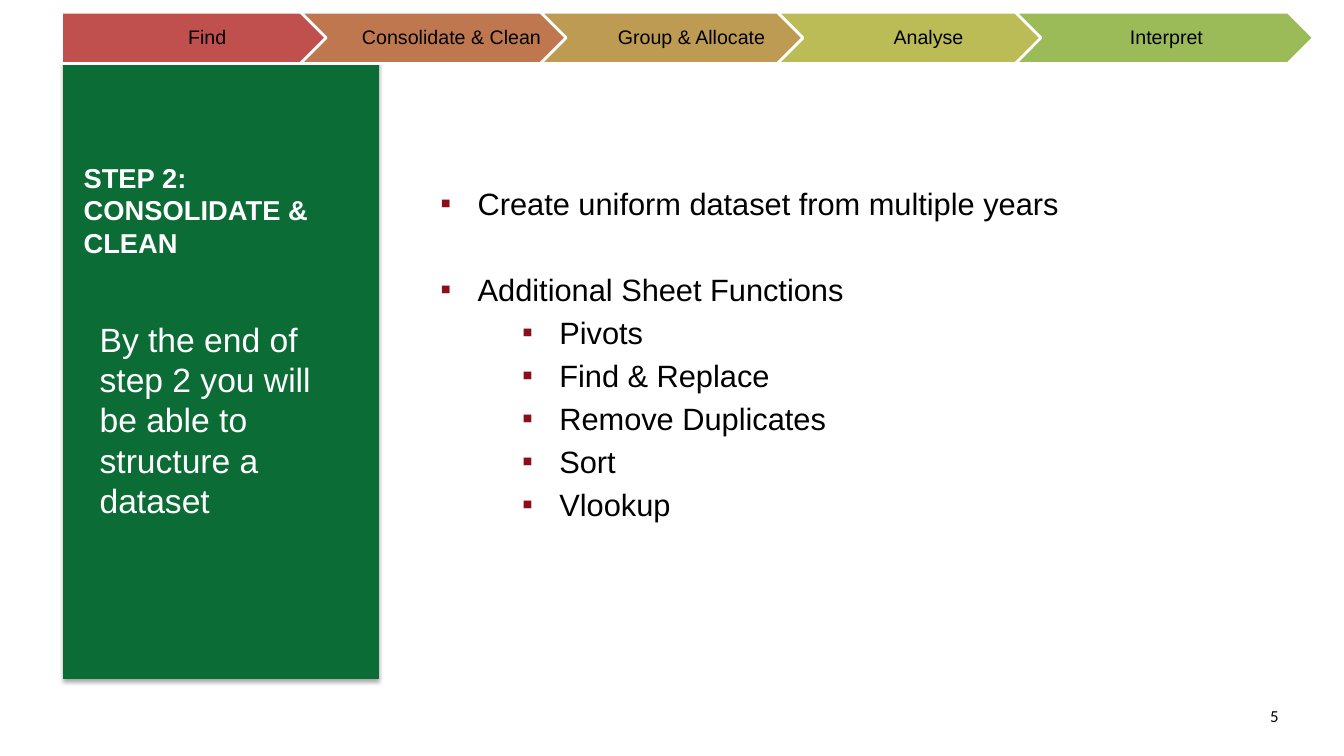
from lxml.etree import SubElement as Sub
from pptx import Presentation
from pptx.dml.color import RGBColor as RGB
from pptx.enum.shapes import MSO_SHAPE as Kind
from pptx.enum.text import MSO_ANCHOR as Anchor, PP_ALIGN as Align
from pptx.oxml.ns import qn
from pptx.util import Pt

PX = 9144  # 100 px to the inch
HUE = {
    "green": "0B6C36", "edge": "086C35", "white": "FFFFFF",
    "black": "000000", "mark": "8B0E18",
}

deck = Presentation()
deck.slide_width, deck.slide_height = 1333 * PX, 750 * PX
slide = deck.slides.add_slide(deck.slide_layouts[6])


def set_up(shape, pads, anchor=Anchor.TOP):
    frame = shape.text_frame
    sides = ("margin_left", "margin_top", "margin_right", "margin_bottom")
    form = {side: pad * PX for side, pad in zip(sides, pads)}
    form |= {"word_wrap": True, "vertical_anchor": anchor}
    for name, value in form.items():
        setattr(frame, name, value)
    return frame


def write(para, text, size, hue="black", face="Arial", bold=False):
    run = para.add_run()
    run.text = text
    form = {"size": Pt(size), "name": face, "bold": bold}
    for name, value in form.items():
        setattr(run.font, name, value)
    run.font.color.rgb = RGB.from_string(HUE[hue])


# Green side panel with a soft shadow
panel = slide.shapes.add_shape(Kind.RECTANGLE, 63 * PX, 34 * PX, 312 * PX, 639 * PX)
panel.shadow.inherit = False
panel.fill.solid()
panel.fill.fore_color.rgb = RGB.from_string(HUE["green"])
panel.line.color.rgb = RGB.from_string(HUE["edge"])
panel.line.width = Pt(0.75)
glow = Sub(panel._element.spPr.find(qn("a:effectLst")), qn("a:outerShdw"),
           blurRad=str(Pt(3.1)), dist=str(Pt(1.8)), dir="5400000", rotWithShape="0")
tint = Sub(glow, qn("a:srgbClr"), val=HUE["black"])
Sub(tint, qn("a:alpha"), val="35000")

# Single texts: title, goal, page number
PAD = (10, 5, 10, 5)
texts = [
    ((73, 127, 285, 135), "STEP 2: CONSOLIDATE & CLEAN", Anchor.BOTTOM, Align.LEFT,
     {"size": 19.5, "hue": "white", "bold": True}),
    ((89, 311, 253, 321), "By the end of step 2 you will be able to structure a dataset",
     Anchor.TOP, Align.LEFT, {"size": 24, "hue": "white"}),
    ((1202, 695, 76, 39), "5", Anchor.TOP, Align.RIGHT, {"size": 12, "face": "Calibri"}),
]
for place, text, anchor, align, form in texts:
    box = slide.shapes.add_textbox(*(n * PX for n in place))
    para = set_up(box, PAD, anchor).paragraphs[0]
    para.alignment = align
    write(para, text, **form)

# Bullet list: text, left indent, space before
items = [
    ("Create uniform dataset from multiple years", 37, 0),
    ("Additional Sheet Functions", 37, 35),
    ("Pivots", 118, 4.4),
    ("Find & Replace", 118, 4.4),
    ("Remove Duplicates", 118, 4.4),
    ("Sort", 118, 4.4),
    ("Vlookup", 118, 4.4),
]
box = slide.shapes.add_textbox(427 * PX, 178 * PX, 787 * PX, 455 * PX)
frame = set_up(box, PAD)
for i, (text, left, gap) in enumerate(items):
    para = frame.add_paragraph() if i else frame.paragraphs[0]
    props = para._p.get_or_add_pPr()
    props.set("marL", str(left * PX))
    props.set("indent", str(-37 * PX))
    Sub(Sub(props, qn("a:buClr")), qn("a:srgbClr"), val=HUE["mark"])
    Sub(props, qn("a:buFont"), typeface="Arial")
    Sub(props, qn("a:buChar"), char="▪")
    if left > 37:
        para.level = 1
    if gap:
        para.space_before = Pt(gap)
    write(para, text, 22)

# Step arrows along the top
steps = [
    ("Find", 61, "C0504D"),
    ("Consolidate & Clean", 298, "BF7750"),
    ("Group & Allocate", 536, "BD9B53"),
    ("Analyse", 771, "BCBC56"),
    ("Interpret", 1007, "9BBB59"),
]
for i, (text, left, hue) in enumerate(steps):
    kind = Kind.CHEVRON if i else Kind.PENTAGON
    arrow = slide.shapes.add_shape(kind, left * PX, 12 * PX, 296 * PX, 51 * PX)
    arrow.shadow.inherit = False
    arrow.fill.solid()
    arrow.fill.fore_color.rgb = RGB.from_string(hue)
    arrow.line.color.rgb = RGB.from_string(HUE["white"])
    arrow.line.width = Pt(2)
    para = set_up(arrow, (6 if i else 8, 4, 2, 4), Anchor.MIDDLE).paragraphs[0]
    para.alignment = Align.CENTER
    para.line_spacing = 0.9
    write(para, text, 14)

deck.save("out.pptx")
